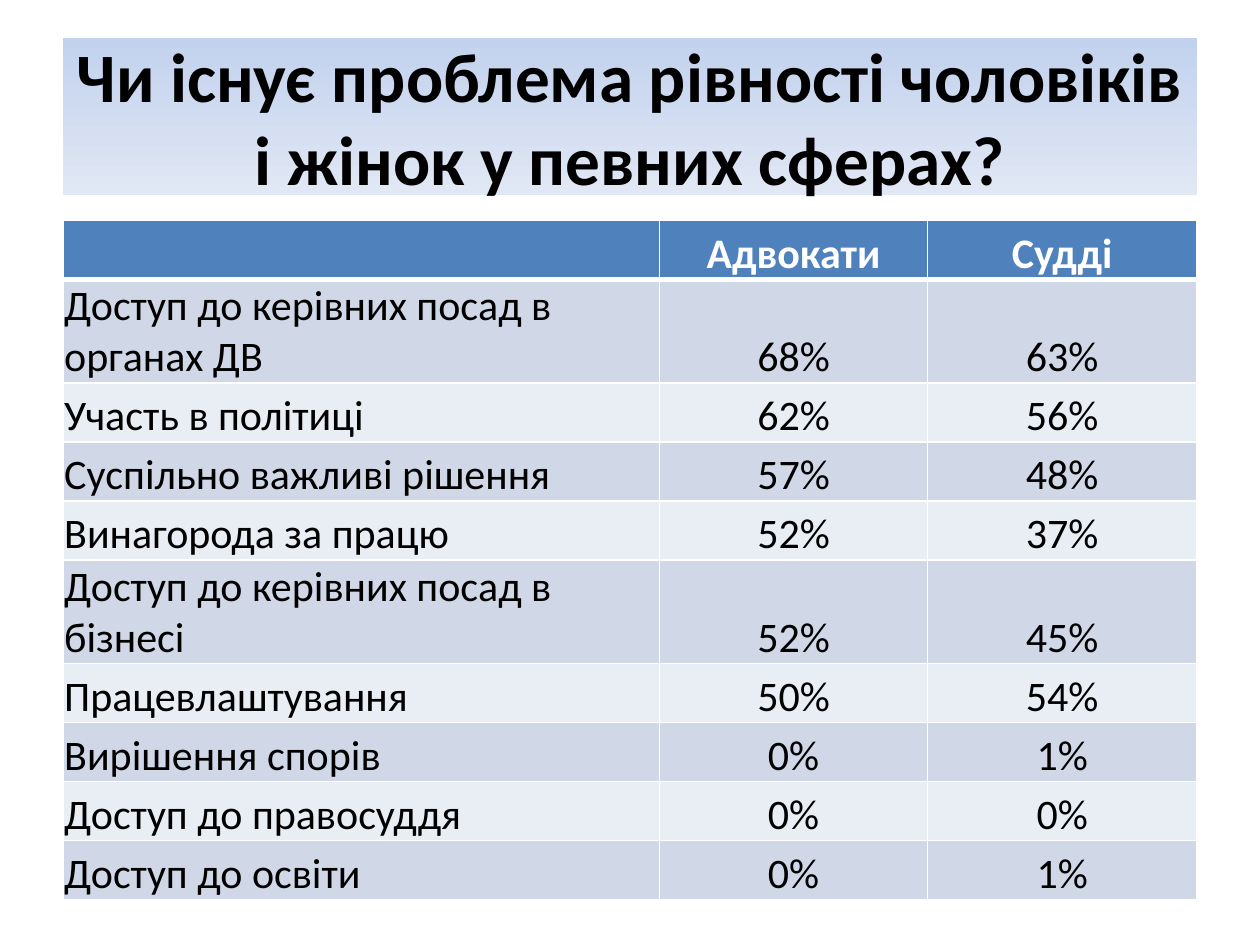
from lxml import etree
from pptx import Presentation
from pptx.dml.color import RGBColor
from pptx.enum.shapes import MSO_SHAPE
from pptx.enum.text import MSO_ANCHOR, PP_ALIGN
from pptx.oxml.ns import qn
from pptx.util import Pt


def color(code):
    return RGBColor.from_string(code)


class SlideBuilder:
    font = "Calibri"
    ink, white, header_fill = "000000", "FFFFFF", "4F81BD"
    bands = ("D0D8E8", "E9EDF4")
    title_gradient = ("C2D1ED", "E1E8F5")

    def __init__(self, slide):
        self.slide = slide

    def text(self, frame, wording, size, ink, bold, align, spacing=None):
        line = frame.paragraphs[0]
        line.text = wording
        line.alignment = align
        line.line_spacing = spacing
        line.font.name, line.font.size, line.font.bold = self.font, Pt(size), bold
        line.font.color.rgb = color(ink)

    def title(self, wording, left, top, width, height):
        banner = self.slide.shapes.add_shape(
            MSO_SHAPE.RECTANGLE, Pt(left), Pt(top), Pt(width), Pt(height))
        banner.shadow.inherit = False
        banner.line.fill.background()
        banner.fill.gradient()
        banner.fill.gradient_angle = 270
        for stop, code in zip(banner.fill.gradient_stops, self.title_gradient):
            stop.color.rgb = color(code)
        banner.text_frame.word_wrap = True
        banner.text_frame.vertical_anchor = MSO_ANCHOR.MIDDLE
        self.text(banner.text_frame, wording, 39.6, self.ink, True, PP_ALIGN.CENTER)

    def borders(self, cell, bottom):
        properties = cell._tc.get_or_add_tcPr()
        widths = {"a:lnL": 1, "a:lnR": 1, "a:lnT": 1, "a:lnB": bottom}
        # Border lines come before the fill in the cell properties
        for place, (tag, width) in enumerate(widths.items()):
            line = etree.Element(qn(tag), w=str(Pt(width)))
            solid = etree.SubElement(line, qn("a:solidFill"))
            etree.SubElement(solid, qn("a:srgbClr"), val=self.white)
            properties.insert(place, line)

    def cell(self, cell, wording, row, column):
        header, label = row == 0, column == 0 and row > 0
        side, top = (0.7, 0.7) if label else (5, 0)
        cell.margin_left = cell.margin_right = Pt(side)
        cell.margin_top, cell.margin_bottom = Pt(top), Pt(0)
        cell.vertical_anchor = MSO_ANCHOR.BOTTOM
        cell.fill.solid()
        cell.fill.fore_color.rgb = color(
            self.header_fill if header else self.bands[(row - 1) % 2])
        self.borders(cell, 3 if header else 1)
        if wording:
            self.text(cell.text_frame, wording, 24, self.white if header else self.ink,
                      header, PP_ALIGN.LEFT if label else PP_ALIGN.CENTER,
                      None if label else 1.15)

    def table(self, rows, left, top, column_widths, row_height, height):
        frame = self.slide.shapes.add_table(
            len(rows), len(column_widths), Pt(left), Pt(top),
            Pt(sum(column_widths)), Pt(height))
        grid = frame.table
        for column, width in zip(grid.columns, column_widths):
            column.width = Pt(width)
        for r, values in enumerate(rows):
            grid.rows[r].height = Pt(row_height)
            for c, value in enumerate(values):
                self.cell(grid.cell(r, c), value, r, c)
        frame.height = Pt(height)


def main():
    deck = Presentation()
    deck.slide_width, deck.slide_height = Pt(720), Pt(540)
    builder = SlideBuilder(deck.slides.add_slide(deck.slide_layouts[6]))

    # Survey results by profession
    survey = [
        ("", "Адвокати", "Судді"),
        ("Доступ до керівних посад в органах ДВ", "68%", "63%"),
        ("Участь в політиці", "62%", "56%"),
        ("Суспільно важливі рішення", "57%", "48%"),
        ("Винагорода за працю", "52%", "37%"),
        ("Доступ до керівних посад в бізнесі", "52%", "45%"),
        ("Працевлаштування", "50%", "54%"),
        ("Вирішення спорів", "0%", "1%"),
        ("Доступ до правосуддя", "0%", "0%"),
        ("Доступ до освіти", "0%", "1%"),
    ]
    builder.table(survey, 36, 126, (341, 153, 154), 29.5, 381.6)

    # Question in the title
    builder.title("Чи існує проблема рівності чоловіків і жінок у певних сферах?",
                  36, 21.6, 648, 90)

    deck.save("out.pptx")


if __name__ == "__main__":
    main()
